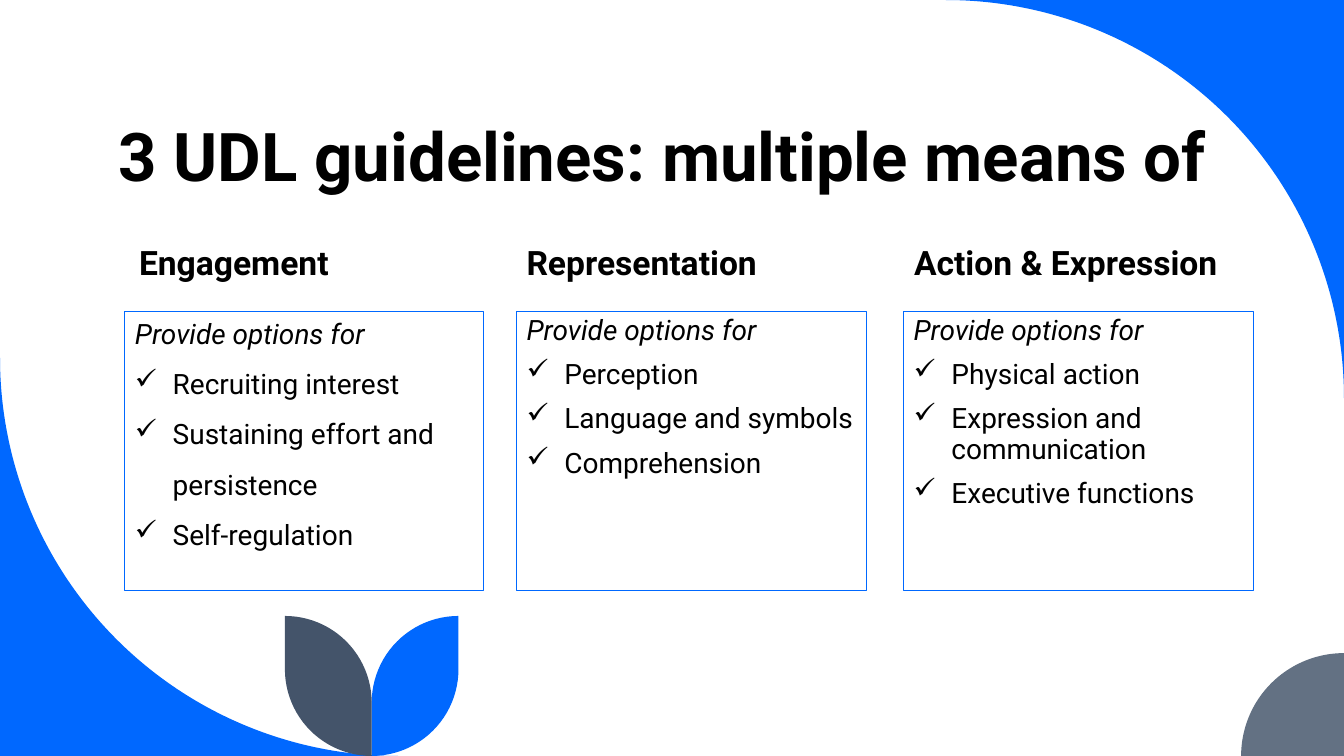
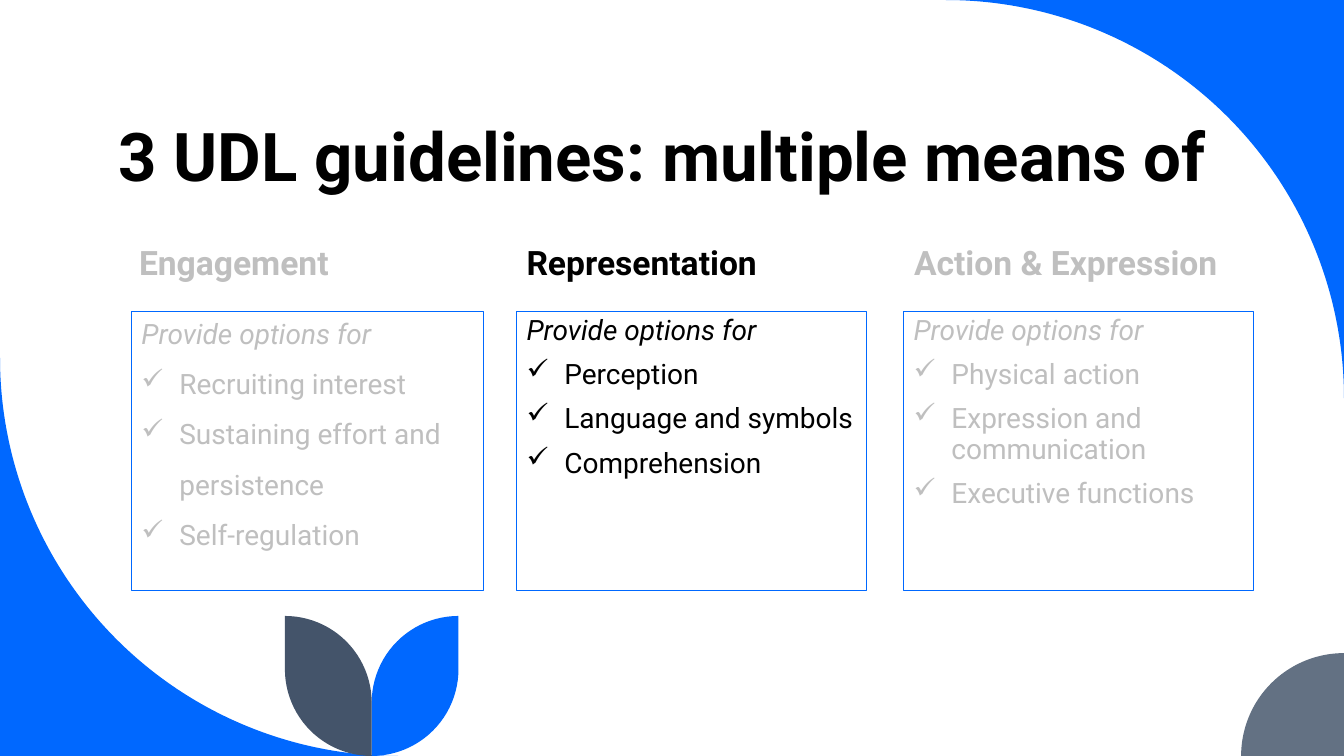
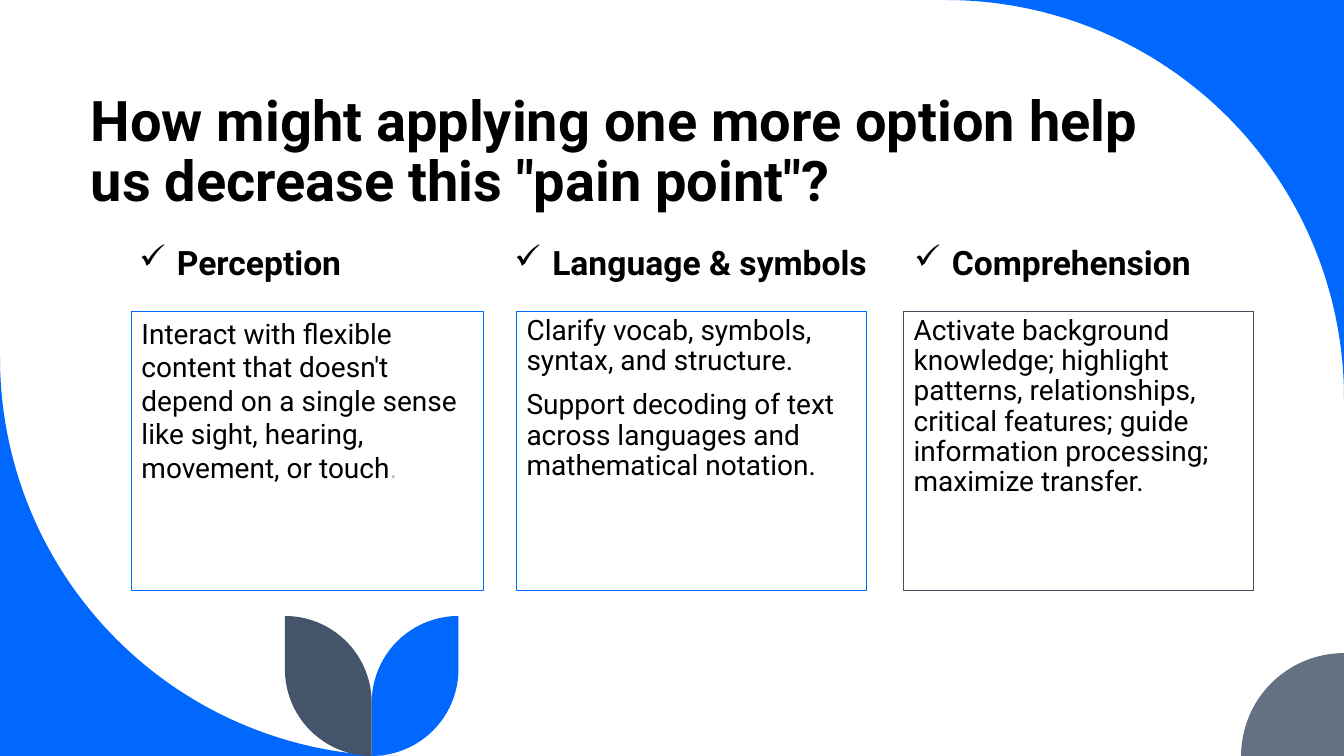
"""Build three slides on the UDL guidelines and their options."""
from dataclasses import dataclass

from lxml import etree
from pptx import Presentation
from pptx.dml.color import RGBColor
from pptx.enum import shapes, text
from pptx.oxml import ns
from pptx.util import Pt


@dataclass(frozen=True)
class Theme:
    font: str = "Roboto"
    bullet_font: str = "OpenSymbol"
    blue: str = "0068FF"
    navy: str = "44546A"
    slate: str = "637183"
    outline: str = "434E5E"
    ink: str = "000000"
    muted: str = "BFBFBF"
    title: int = 48
    long_title: int = 40
    heading: int = 24
    body: int = 20


T = Theme()
WIDTH, HEIGHT = 960, 540


def add_paragraph(tf, runs, size, spacing=0.9, before=0, bullet=False, bold=False, italic=False):
    """Add one paragraph made of (text, colour) runs."""
    p = tf.add_paragraph() if tf.paragraphs[0].runs else tf.paragraphs[0]
    p.alignment = text.PP_ALIGN.LEFT
    p.line_spacing = spacing
    p.space_before = Pt(before)
    if bullet:
        pPr = p._p.get_or_add_pPr()
        pPr.set("marL", str(Pt(27)))
        pPr.set("indent", str(Pt(-27)))
        etree.SubElement(pPr, ns.qn("a:buFont")).set("typeface", T.bullet_font)
        etree.SubElement(pPr, ns.qn("a:buChar")).set("char", "✓")
    for words, colour in runs:
        r = p.add_run()
        r.text = words
        r.font.name = T.font
        r.font.size = Pt(size)
        r.font.bold = bold
        r.font.italic = italic
        r.font.color.rgb = RGBColor.from_string(colour)


prs = Presentation()
prs.slide_width, prs.slide_height = Pt(WIDTH), Pt(HEIGHT)
layout = prs.slide_layouts[5]
kinds = shapes.PP_PLACEHOLDER
for parent in (layout, prs.slide_master):
    for ph in list(parent.placeholders):
        if ph.placeholder_format.type in (kinds.DATE, kinds.FOOTER, kinds.SLIDE_NUMBER):
            ph.element.getparent().remove(ph.element)
slides = [prs.slides.add_slide(layout) for _ in range(3)]

CORNER, DISC, LEAF, STEM = 284.4, 73.5, 62, 265.5
TIP, UPPER, LOWER = 440, 478, 502
decor = [
    (T.blue, CORNER, (WIDTH - CORNER, 0), [(WIDTH, CORNER, 270), (WIDTH, 0, None)]),
    (T.blue, CORNER, (CORNER, HEIGHT), [(0, HEIGHT - CORNER, 90), (0, HEIGHT, None)]),
    (T.slate, DISC, (WIDTH - DISC, HEIGHT), [(WIDTH, HEIGHT - DISC, 180), (WIDTH, HEIGHT, None)]),
    (T.blue, LEAF, (STEM + LEAF, UPPER),
     [(STEM, HEIGHT, 0), (STEM, LOWER, None), (STEM + LEAF, TIP, 180)]),
    (T.navy, LEAF, (STEM, HEIGHT),
     [(STEM - LEAF, UPPER, 90), (STEM - LEAF, TIP, None), (STEM, LOWER, 270)]),
]
for colour, radius, (x, y), segments in decor:
    outline = slides[0].shapes.build_freeform(Pt(x), Pt(y), scale=1.0)
    outline.add_line_segments([(Pt(px), Pt(py)) for px, py, _ in segments], close=True)
    sp = outline.convert_to_shape()
    sp.shadow.inherit = False
    sp.fill.solid()
    sp.fill.fore_color.rgb = RGBColor.from_string(colour)
    sp.line.fill.background()
    lines = list(sp.element.iter(ns.qn("a:lnTo")))
    for line, (_, _, start) in zip(lines, segments):
        if start is not None:
            curve = etree.Element(ns.qn("a:arcTo"), wR=str(Pt(radius)), hR=str(Pt(radius)),
                                  stAng=str(start * 60000), swAng=str(90 * 60000))
            line.getparent().replace(line, curve)
    layout.shapes.element.append(sp.element)

GUIDELINES = "3 UDL guidelines: multiple means of"
titles = [
    (GUIDELINES, T.title, 77.3, 143.8),
    (GUIDELINES, T.title, 77.3, 143.8),
    ('How might applying one more option help us decrease this "pain point"?',
     T.long_title, 57.6, 156.2),
]
for s, (words, size, left, bottom) in zip(slides, titles):
    title = s.shapes.title
    title.left, title.top, title.width, title.height = Pt(left), Pt(bottom - 110), Pt(811.5), Pt(110)
    tf = title.text_frame
    tf.word_wrap = True
    tf.auto_size = text.MSO_AUTO_SIZE.NONE
    tf.vertical_anchor = text.MSO_ANCHOR.BOTTOM
    add_paragraph(tf, [(words, T.ink)], size, bold=True)

heading_lefts = [(92.2, 369, 645.8), (92.2, 369, 645.8), (92.2, 360.4, 645.8)]
box_lefts = [(89.3, 369, 645.5), (94, 369, 645.5), (94, 369, 645.5)]
box_rights = (345.6, 619, 895.7)
box_lines = [(T.blue,) * 3, (T.blue,) * 3, (T.blue, T.blue, T.outline)]
guidelines = [
    ("Engagement",
     ["Recruiting interest", "Sustaining effort and persistence", "Self-regulation"]),
    ("Representation", ["Perception", "Language and symbols", "Comprehension"]),
    ("Action & Expression",
     ["Physical action", "Expression and communication", "Executive functions"]),
]
options = [
    ("Perception",
     [[("Interact with flexible content that doesn't depend on a single sense "
        "like sight, hearing, movement, or touch", T.ink), (".", T.muted)]]),
    ("Language & symbols",
     [[("Clarify vocab, symbols, syntax, and structure.", T.ink)],
      [("Support decoding of text across languages and mathematical notation.", T.ink)]]),
    ("Comprehension",
     [[("Activate background knowledge; highlight patterns, relationships, critical features; "
        "guide information processing; maximize transfer.", T.ink)]]),
]
contents = [guidelines, guidelines, options]
colours = [(T.ink,) * 3, (T.muted, T.ink, T.muted), (T.ink,) * 3]

for n, s in enumerate(slides):
    is_option = contents[n] is options
    for col, (heading, items) in enumerate(contents[n]):
        colour = colours[n][col]
        left = box_lefts[n][col]
        box = s.shapes.add_textbox(Pt(left), Pt(222.3), Pt(box_rights[col] - left), Pt(199.4))
        box.line.color.rgb = RGBColor.from_string(box_lines[n][col])
        box.line.width = Pt(0.75)
        tf = box.text_frame
        tf.word_wrap = True
        spacing, bullet_spacing, before = (1.0, 1.5, 0) if col == 0 else (0.9, 0.9, 10)
        if is_option:
            for runs in items:
                add_paragraph(tf, runs, T.body, spacing, before)
        else:
            add_paragraph(tf, [("Provide options for", colour)], T.body, spacing, before, italic=True)
            for item in items:
                add_paragraph(tf, [(item, colour)], T.body, bullet_spacing, before, bullet=True)

        label = s.shapes.add_textbox(Pt(heading_lefts[n][col]), Pt(172.6), Pt(267), Pt(35))
        label.text_frame.word_wrap = True
        add_paragraph(label.text_frame, [(heading, colour)], T.heading, before=10,
                      bullet=is_option, bold=True)

prs.save("out.pptx")
